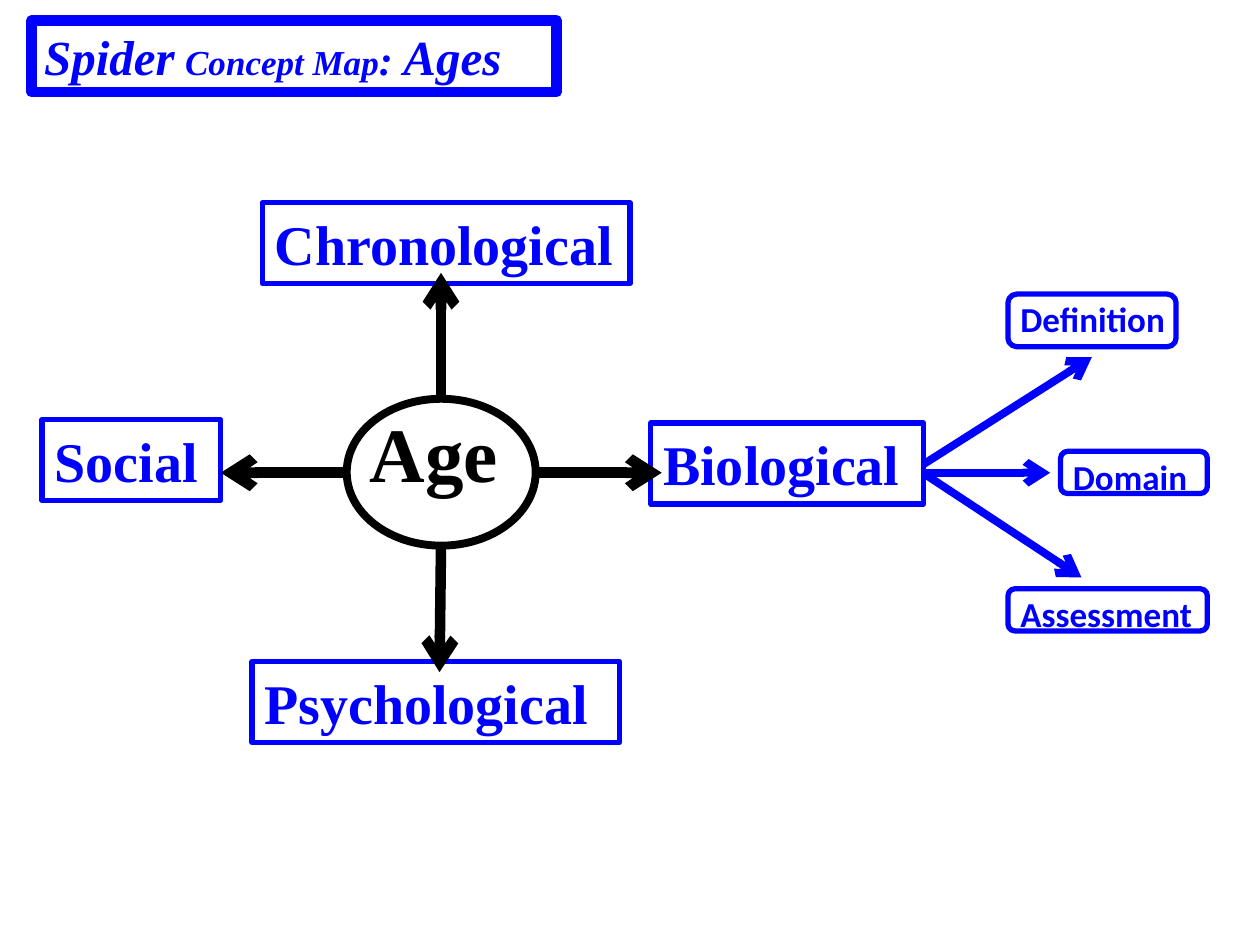
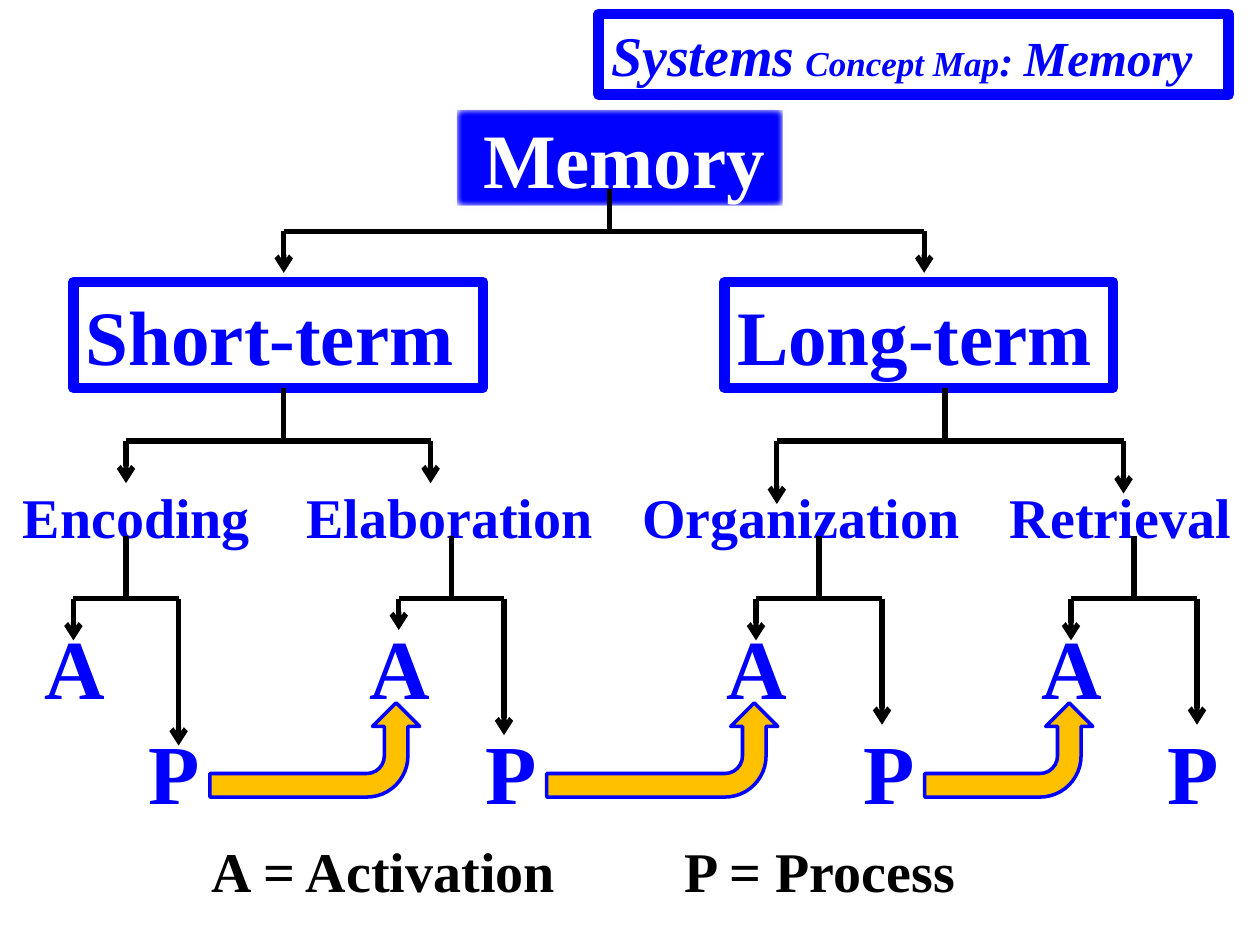
"""Build two concept map slides: a spider map of ages and a systems map of memory."""
from lxml import etree
from pptx import Presentation
from pptx import util as u
from pptx.dml.color import RGBColor
from pptx.enum import shapes as kinds, text as t
from pptx.oxml.ns import qn

BLUE, BLACK, WHITE, AMBER = "0000FF", "000000", "FFFFFF", "FFC000"
SERIF, SANS = "Times New Roman", "Calibri"
KIND = kinds.MSO_SHAPE

SPIDER_TITLE = [("Spider", 28), (" ", 24), ("Concept Map", 20), (": ", 24), ("Ages", 28)]
AGE_TYPES = [
    ("Chronological", (5.29, 4.09, 7.41, 1.63)),
    ("Biological", (13.12, 8.53, 5.5, 1.63)),
    ("Psychological", (5.08, 13.34, 7.41, 1.63)),
    ("Social", (0.85, 8.46, 3.6, 1.63)),
]
SPOKES = [
    (8.89, 8.04, 8.89, 5.5),
    (6.99, 9.53, 4.45, 9.53),
    (8.89, 11.01, 8.86, 13.55),
    (10.8, 9.53, 13.34, 9.53),
]
ASPECTS = [
    ("Definition", 20.32, 5.87, 4.02, (3.39, 1.06)),
    ("Domain", 21.38, 9.04, 3.18, (2.96, 0.85)),
    ("Assessment", 20.32, 11.81, 4.02, (4.02, 0.85)),
]
BRANCHES = [
    (18.63, 9.53, 21.17, 9.53),
    (18.63, 9.55, 21.8, 11.64),
    (18.63, 9.35, 22.01, 7.2),
]

SYSTEMS_TITLE = [("Systems", 32), (" ", 24), ("Concept Map", 20), (": ", 24), ("Memory", 28)]
STORES = [("Short-term", 1.48, 8.26), ("Long-term", 14.61, 7.83)]
PROCESSES = [
    ("Encoding", 0.21, 5.29),
    ("Organization", 12.7, 6.99),
    ("Retrieval", 20.11, 5.08),
    ("Elaboration", 5.93, 6.35),
]
LETTERS = [
    ("A", 12.28, (0.64, 7.2, 14.39, 20.74)),
    ("P", 14.4, (2.75, 9.53, 17.15, 23.28)),
]
LEGEND = [("A = Activation", 4.02), ("P = Process", 13.55)]
# left, right, bar, stem, stem_top, left_tip, right_tip
TREES = [
    (5.72, 18.63, 4.66, 12.28, 3.81, 5.5, 5.5),
    (2.54, 8.68, 8.89, 5.72, 7.83, 9.74, 9.74),
    (1.48, 3.6, 12.07, 2.54, 10.8, 12.91, 15.03),
    (8.04, 10.16, 12.07, 9.1, 10.8, 12.7, 14.82),
    (15.66, 22.65, 8.89, 19.05, 7.83, 10.16, 9.95),
    (15.24, 17.78, 12.07, 16.51, 10.8, 12.91, 14.61),
    (21.59, 24.13, 12.07, 22.86, 10.8, 12.91, 14.61),
]
BENT_ARROWS = [(4.23, 4.23), (11.02, 4.66), (18.64, 3.39)]
BENT_TOP, BENT_HEIGHT = 14.17, 1.9


def color(code):
    return RGBColor.from_string(code)


def lengths(values):
    return [u.Cm(value) for value in values]


def write(shape, content, size=32, ink=BLUE, font=SERIF, italic=False):
    frame = shape.text_frame
    frame.word_wrap = True
    frame.vertical_anchor = t.MSO_ANCHOR.MIDDLE
    paragraph = frame.paragraphs[0]
    paragraph.alignment = t.PP_ALIGN.LEFT
    runs = [(content, size)] if isinstance(content, str) else content
    for words, points in runs:
        run = paragraph.add_run()
        run.text = words
        run.font.name, run.font.size = font, u.Pt(points)
        run.font.bold, run.font.italic = True, italic
        run.font.color.rgb = color(ink)


def label(shapes, content, box, **style):
    write(shapes.add_textbox(*lengths(box)), content, **style)


def outline(shapes, box, kind=KIND.RECTANGLE, line=BLUE, width=3, fill=None):
    shape = shapes.add_shape(kind, *lengths(box))
    shape.shadow.inherit = False
    shape.line.color.rgb, shape.line.width = color(line), u.Pt(width)
    if fill:
        shape.fill.solid()
        shape.fill.fore_color.rgb = color(fill)
    else:
        shape.fill.background()
    return shape


def connect(shapes, ends, ink=BLACK, width=3, arrow=True):
    connector = shapes.add_connector(kinds.MSO_CONNECTOR.STRAIGHT, *lengths(ends))
    connector.line.color.rgb, connector.line.width = color(ink), u.Pt(width)
    properties = connector._element.spPr
    if arrow:
        etree.SubElement(properties.find(qn("a:ln")), qn("a:tailEnd"), type="arrow")
    etree.SubElement(properties, qn("a:effectLst"))


def title(slide, runs, box):
    write(outline(slide.shapes, box, width=6), runs, italic=True)


def tree(slide, left, right, bar, stem, stem_top, left_tip, right_tip):
    shapes = slide.shapes.add_group_shape().shapes
    connect(shapes, (left, bar, right, bar), arrow=False)
    connect(shapes, (stem, stem_top, stem, bar), arrow=False)
    connect(shapes, (left, bar, left, left_tip))
    connect(shapes, (right, bar, right, right_tip))


def bent_arrow(slide, left, width):
    shift = (width - BENT_HEIGHT) / 2
    box = (left + shift, BENT_TOP - shift, BENT_HEIGHT, width)
    shape = outline(slide.shapes, box, KIND.BENT_ARROW, width=2, fill=AMBER)
    shape.rotation = 270
    shape._element.spPr.find(qn("a:xfrm")).set("flipV", "1")


def spider_slide(slide):
    for name, box in AGE_TYPES:
        write(outline(slide.shapes, box), name)
    for ends in SPOKES:
        connect(slide.shapes, ends, width=6)
    title(slide, SPIDER_TITLE, (0.64, 0.41, 10.58, 1.45))
    outline(slide.shapes, (6.99, 8.04, 3.81, 2.96), KIND.OVAL, BLACK, 4.5, WHITE)
    label(slide.shapes, "Age", (7.2, 8.04, 3.85, 2.13), size=44, ink=BLACK)
    for name, left, top, width, frame_size in ASPECTS:
        shapes = slide.shapes.add_group_shape().shapes
        label(shapes, name, (left, top, width, 1.12), size=20, font=SANS)
        outline(shapes, (left, top + 0.06, *frame_size), KIND.ROUNDED_RECTANGLE)
    for ends in BRANCHES:
        connect(slide.shapes, ends, ink=BLUE, width=4.5)


def systems_slide(slide):
    for name, left, width in STORES:
        write(outline(slide.shapes, (left, 5.69, width, 2.13), width=6, fill=WHITE), name, size=44)
    for name, left, width in PROCESSES:
        label(slide.shapes, name, (left, 9.6, width, 1.6))
    for letter, top, lefts in LETTERS:
        for left in lefts:
            label(slide.shapes, letter, (left, top, 1.69, 2.29), size=48)
    for meaning, left in LEGEND:
        label(slide.shapes, meaning, (left, 16.72, 7.83, 1.63), ink=BLACK)
    title(slide, SYSTEMS_TITLE, (12.07, 0.28, 12.7, 1.63))
    memory = outline(slide.shapes, (9.1, 2.12, 6.77, 2.13), line=WHITE, width=6, fill=BLUE)
    effects = memory._element.spPr.find(qn("a:effectLst"))
    etree.SubElement(effects, qn("a:softEdge"), rad=str(u.Pt(5)))
    write(memory, " Memory", size=44, ink=WHITE)
    for branch in TREES:
        tree(slide, *branch)
    for left, width in BENT_ARROWS:
        bent_arrow(slide, left, width)


def main():
    presentation = Presentation()
    presentation.slide_width, presentation.slide_height = u.Cm(25.4), u.Cm(19.05)
    for build in (spider_slide, systems_slide):
        build(presentation.slides.add_slide(presentation.slide_layouts[6]))
    presentation.save("out.pptx")


if __name__ == "__main__":
    main()
